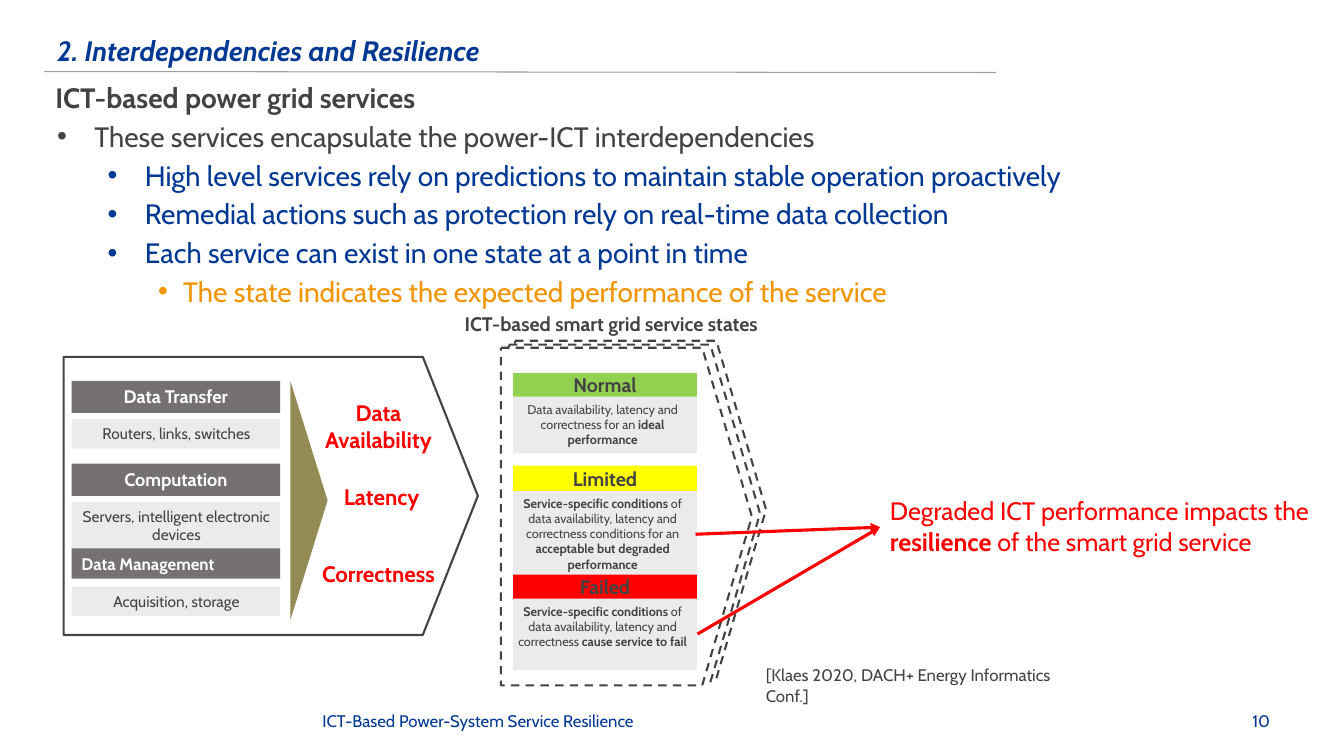
from lxml import etree
from pptx import Presentation
from pptx.dml.color import RGBColor
from pptx.enum import dml, shapes, text
from pptx.oxml.ns import qn
from pptx.util import Pt

# Content
BLUE, GREY, ORANGE, RED, WHITE = "003893", "434343", "F29400", "FF0000", "FFFFFF"
HEADER, PANEL, OLIVE, RULE = "767171", "D9D9D9", "948A54", "999F9E"
FONT = "Cabin"

TITLE = "2. Interdependencies and Resilience"
SUBTITLE = "ICT-based power grid services"
FOOTER, PAGE = "ICT-Based Power-System Service Resilience", "10"
CITATION = "[Klaes 2020, DACH+ Energy Informatics Conf.]"
STATES_TITLE = "ICT-based smart grid service states"
BULLETS = [  # level, text
    (0, "These services encapsulate the power-ICT interdependencies"),
    (1, "High level services rely on predictions to maintain stable operation proactively"),
    (1, "Remedial actions such as protection rely on real-time data collection"),
    (1, "Each service can exist in one state at a point in time"),
    (2, "The state indicates the expected performance of the service"),
]
LEVELS = [(26.6, -26.6, GREY), (62.6, -26.6, BLUE), (90, -18, ORANGE)]  # indent, hang, colour
LAYERS = [  # name, detail, top, header height, detail height, size, alignment
    ("Data Transfer", "Routers, links, switches", 272, 23, 21, 13, "CENTER"),
    ("Computation", "Servers, intelligent electronic devices", 331.2, 23, 34, 13, "CENTER"),
    ("Data Management", "Acquisition, storage", 391.7, 21.6, 21, 12, "LEFT"),
]
QUALITIES = [  # name, left, top, height
    ("Data Availability", 208.8, 281.5, 46),
    ("Latency", 211, 341.3, 26.6),
    ("Correctness", 208.8, 396.7, 26.6),
]
STATES = [  # name, colour, top, header height, panel height, runs (text, bold)
    ("Normal", "92D050", 266.4, 17, 40.3,
     [("Data availability, latency and correctness for an ", False),
      ("ideal performance", True)]),
    ("Limited", "FFFF00", 332.6, 18, 62,
     [("Service-specific conditions ", True),
      ("of data availability, latency and correctness conditions for an ", False),
      ("acceptable but degraded performance", True)]),
    ("Failed", RED, 410.4, 17.3, 51,
     [("Service-specific conditions", True),
      (" of data availability, latency and correctness ", False),
      ("cause service to fail", True)]),
]
IMPACT = [("Degraded ICT performance impacts the ", False), ("resilience", True),
          (" of the smart grid service", False)]
STACK = [(367.9, 243.4), (363.6, 246.2), (357.8, 248.4)]  # back to front
ARROW_TIP = (628.6, 376.6)
ARROW_STARTS = [(496.8, 381.6), (498.2, 452.9)]

prs = Presentation()
prs.slide_width, prs.slide_height = Pt(960), Pt(540)
s = prs.slides.add_slide(prs.slide_layouts[6])


def rgb(color):
    return RGBColor.from_string(color)


def write(p, runs, size, color, bold=False, italic=False):
    if isinstance(runs, str):
        runs = [(runs, bold)]
    for words, strong in runs:
        r = p.add_run()
        r.text = words
        style = dict(name=FONT, size=Pt(size), bold=strong, italic=italic)
        for key, value in style.items():
            setattr(r.font, key, value)
        r.font.color.rgb = rgb(color)


def frame(sp, anchor="TOP", ins=(7.2, 3.6, 7.2, 3.6)):
    tf = sp.text_frame
    sides = ("margin_left", "margin_top", "margin_right", "margin_bottom")
    style = dict(zip(sides, map(Pt, ins)), word_wrap=True,
                 vertical_anchor=getattr(text.MSO_ANCHOR, anchor))
    for key, value in style.items():
        setattr(tf, key, value)
    return tf


def label(box, runs, size, color, align="LEFT", anchor="TOP", **style):
    tf = frame(s.shapes.add_textbox(*map(Pt, box)), anchor)
    tf.paragraphs[0].alignment = getattr(text.PP_ALIGN, align)
    write(tf.paragraphs[0], runs, size, color, **style)


def block(kind, box, fill=None, outline=None, dashed=False, alpha=None):
    sp = s.shapes.add_shape(getattr(shapes.MSO_SHAPE, kind), *map(Pt, box))
    sp.shadow.inherit = False
    if fill:
        sp.fill.solid()
        sp.fill.fore_color.rgb = rgb(fill)
    else:
        sp.fill.background()
    if alpha:
        color = sp.fill._xPr.find(qn("a:solidFill"))[0]
        etree.SubElement(color, qn("a:alpha")).set("val", str(alpha * 1000))
    if outline:
        sp.line.color.rgb = rgb(outline)
        sp.line.width = Pt(1.5)
        if dashed:
            sp.line.dash_style = dml.MSO_LINE.DASH
    else:
        sp.line.fill.background()
    return sp


def card(box, fill, runs, size, color, align="CENTER", anchor="TOP",
         ins=(7.2, 3.6, 7.2, 3.6), alpha=None, bold=False):
    tf = frame(block("RECTANGLE", box, fill, alpha=alpha), anchor, ins)
    tf.paragraphs[0].alignment = getattr(text.PP_ALIGN, align)
    write(tf.paragraphs[0], runs, size, color, bold)


def line(start, end, color, width, arrow=False):
    c = s.shapes.add_connector(shapes.MSO_CONNECTOR.STRAIGHT, *map(Pt, start + end))
    c.line.color.rgb = rgb(color)
    c.line.width = Pt(width)
    if arrow:
        etree.SubElement(c.line._get_or_add_ln(), qn("a:tailEnd")).set("type", "triangle")
    etree.SubElement(c._element.spPr, qn("a:effectLst"))


# Heading and footer
line((31.7, 51.1), (711.4, 51.8), RULE, 0.75)
label((33.8, 19.4, 687.6, 32.4), TITLE, 20, BLUE, anchor="MIDDLE", bold=True, italic=True)
label((32.4, 53.3, 687.6, 32.4), SUBTITLE, 20, GREY, anchor="MIDDLE", bold=True)
label((223.2, 500.4, 598.3, 28.8), FOOTER, 12, BLUE, anchor="MIDDLE")
label((822.2, 500.4, 92.2, 28.8), PAGE, 12, BLUE, "RIGHT", "MIDDLE")

# Bullets
tf = frame(s.shapes.add_textbox(Pt(33.8), Pt(81.6), Pt(877.7), Pt(150)))
for i, (level, words) in enumerate(BULLETS):
    p = tf.add_paragraph() if i else tf.paragraphs[0]
    indent, hang, color = LEVELS[level]
    pPr = p._p.get_or_add_pPr()
    pPr.set("marL", str(Pt(indent)))
    pPr.set("indent", str(Pt(hang)))
    etree.SubElement(pPr, qn("a:buFont")).set("typeface", "Arial")
    etree.SubElement(pPr, qn("a:buChar")).set("char", "•")
    p.level = level
    if i:
        p.space_before = Pt(3.7)
    write(p, words, 20, color)

# ICT layers and the qualities they deliver
block("PENTAGON", (45.4, 254.9, 295.9, 198.7), outline=GREY).adjustments[0] = 0.198
for name, detail, top, head_h, detail_h, size, align in LAYERS:
    card((51.1, top, 149, head_h), HEADER, name, size, WHITE, align, bold=True)
    card((51.1, top + 27.4, 149, detail_h), PANEL, detail, 11, GREY,
         ins=(5, 3.6, 4, 3.6), alpha=50)
for name, left, top, height in QUALITIES:
    label((left, top, 123.1, height), name, 16, RED, "CENTER", bold=True)
wedge = block("ISOSCELES_TRIANGLE", (135.4, 344.2, 170.6, 26.6), OLIVE)
wedge.rotation = 90

# Service states
for left, top in STACK:
    sheet = block("PENTAGON", (left, top, 179.3, 241.2), WHITE, GREY, dashed=True)
    sheet.adjustments[0] = 0.198
label((319.7, 219.6, 234, 24.5), STATES_TITLE, 14, GREY, "CENTER", bold=True)
for name, color, top, head_h, panel_h, runs in STATES:
    card((366.5, top + head_h, 131.4, panel_h), PANEL, runs, 9, GREY,
         ins=(3.6, 3.6, 7.2, 3.6), alpha=50)
    card((366.5, top, 131.4, head_h), color, name, 14, GREY, anchor="MIDDLE",
         ins=(2.9, 1.4, 2.9, 1.4), bold=True)

# Impact of degraded states
label((628.6, 350.6, 331.2, 51.1), IMPACT, 18, RED)
for start in ARROW_STARTS:
    line(start, ARROW_TIP, RED, 2.25, arrow=True)
label((540, 471.6, 243.4, 36), CITATION, 12, GREY)

prs.save("out.pptx")
